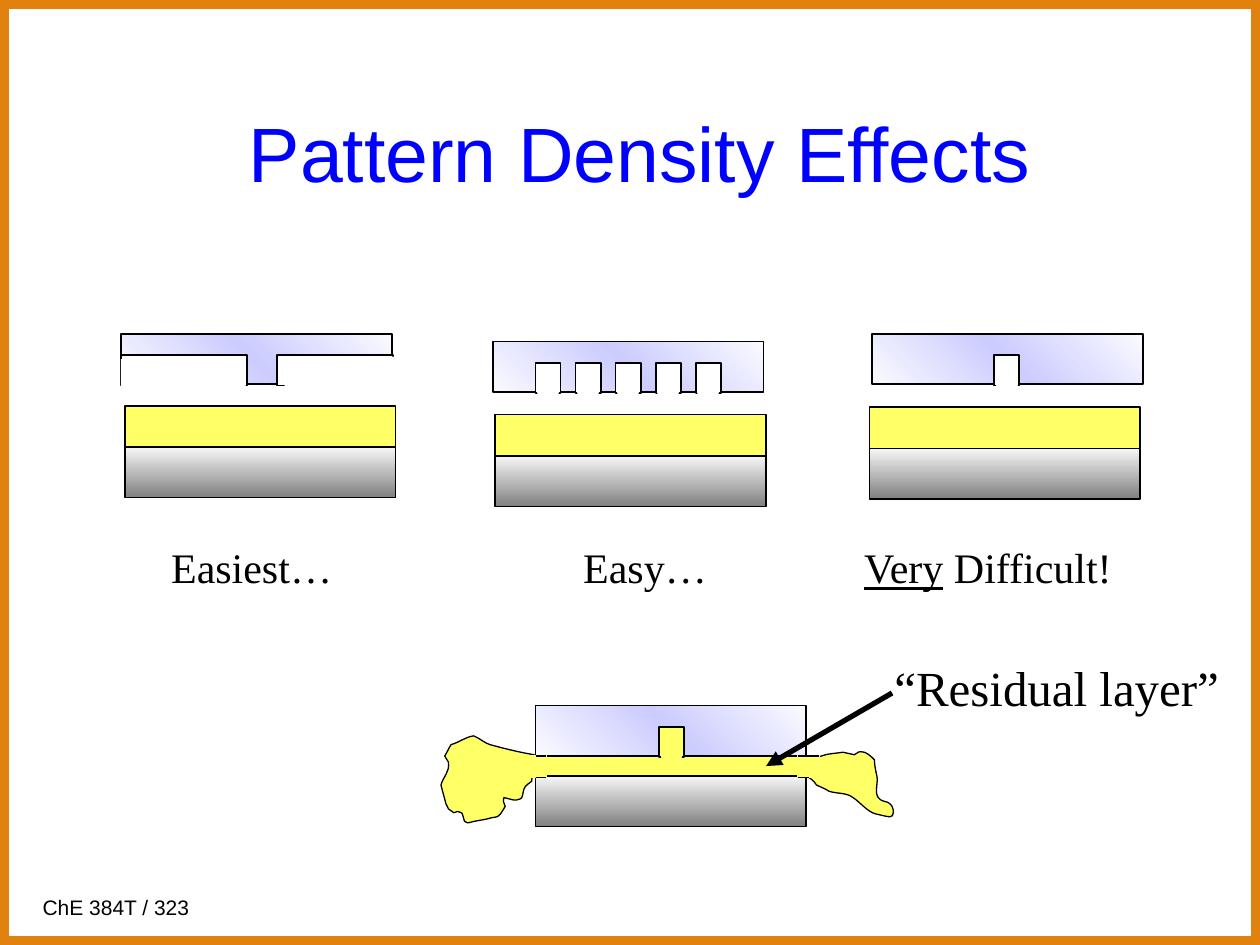
from lxml import etree
from pptx import Presentation
from pptx.dml.color import RGBColor
from pptx.enum import shapes, text
from pptx.oxml.ns import qn
from pptx.util import Inches, Pt

BLACK = RGBColor(0, 0, 0)
WHITE = RGBColor(255, 255, 255)
BLUE = RGBColor(0, 0, 255)
ORANGE = RGBColor(0xE2, 0x82, 0x0E)
YELLOW = RGBColor(0xFF, 0xFF, 0x66)
PALE = RGBColor(0xFA, 0xFA, 0xFF)
LAVENDER = RGBColor(0xCC, 0xCC, 0xFF)
LIGHT_GREY = RGBColor(0xF6, 0xF6, 0xF6)
GREY = RGBColor(0x80, 0x80, 0x80)

# Gradients: counter-clockwise angle, then evenly spaced colours
SILICON = (270, (LIGHT_GREY, GREY))
MOLD = (45, (PALE, LAVENDER, PALE))

LAYER_WIDTH, MOLD_HEIGHT, RESIST_HEIGHT = 2.15, 0.4, 0.33
CAVITY_WIDTH, CAVITY_HEIGHT, CAVITY_DROP = 0.2, 0.24, 0.17

# resist corner, mold corner, cavity left edges, cavity colour
DIFFICULT = ((6.9, 3.23), (6.92, 2.65), [7.89], WHITE)
EASY = ((3.93, 3.29), (3.91, 2.71), [4.25 + 0.318 * i for i in range(5)], WHITE)
EASIEST = ((0.99, 3.22), (0.96, 2.65), [], WHITE)
PRESSED = ((4.25, 5.83), (4.25, 5.6), [5.23], YELLOW)

# Wide openings either side of the single post: left, top, width, height, line
OPENINGS = [
    (0.96, 2.82, 1, 0.24, BLACK), (2.2, 2.82, 0.92, 0.24, BLACK),
    (2.26, 2.96, 0.8, 0.09, WHITE),
    (0.96, 2.85, 0.99, 0.23, None), (2.26, 2.83, 0.99, 0.24, None),
]

# Squeezed-out resist: start point, then Bezier segments (two controls and an end)
LEFT_START = (4.24, 5.99)
LEFT_CURVES = [
    (4.12, 5.97, 4, 5.94, 3.89, 5.91), (3.85, 5.9, 3.81, 5.86, 3.76, 5.84),
    (3.69, 5.85, 3.65, 5.89, 3.58, 5.91), (3.56, 5.94, 3.55, 5.97, 3.53, 6),
    (3.54, 6.02, 3.55, 6.03, 3.56, 6.05), (3.57, 6.13, 3.52, 6.16, 3.5, 6.23),
    (3.51, 6.27, 3.53, 6.34, 3.54, 6.38), (3.55, 6.39, 3.55, 6.41, 3.56, 6.42),
    (3.57, 6.43, 3.59, 6.44, 3.59, 6.44), (3.59, 6.44, 3.59, 6.45, 3.6, 6.45),
    (3.61, 6.45, 3.63, 6.44, 3.63, 6.44), (3.64, 6.44, 3.67, 6.45, 3.67, 6.46),
    (3.68, 6.48, 3.68, 6.51, 3.69, 6.52), (3.7, 6.53, 3.72, 6.53, 3.72, 6.53),
    (3.78, 6.51, 3.84, 6.51, 3.9, 6.49), (3.92, 6.49, 3.95, 6.48, 3.95, 6.48),
    (3.98, 6.46, 3.99, 6.43, 4.01, 6.4), (4, 6.37, 3.99, 6.36, 4, 6.33),
    (4.03, 6.34, 4.05, 6.34, 4.08, 6.35), (4.09, 6.35, 4.11, 6.35, 4.13, 6.34),
    (4.15, 6.34, 4.15, 6.28, 4.16, 6.26), (4.17, 6.23, 4.2, 6.22, 4.22, 6.2),
    (4.22, 6.18, 4.22, 6.16, 4.24, 6.15), (4.27, 6.11, 4.24, 6.04, 4.24, 5.99),
]
RIGHT_START = (6.4, 6.02)
RIGHT_CURVES = [
    (6.44, 6.03, 6.48, 6.01, 6.52, 6), (6.57, 5.98, 6.63, 5.98, 6.69, 5.97),
    (6.72, 5.98, 6.75, 5.98, 6.78, 5.99), (6.82, 5.97, 6.8, 5.96, 6.86, 5.97),
    (6.89, 5.98, 6.92, 6.01, 6.94, 6.03), (6.94, 6.07, 6.95, 6.12, 6.96, 6.16),
    (6.97, 6.21, 6.94, 6.29, 6.97, 6.33), (6.99, 6.36, 7.03, 6.36, 7.05, 6.37),
    (7.08, 6.39, 7.08, 6.4, 7.09, 6.43), (7.09, 6.44, 7.09, 6.48, 7.07, 6.48),
    (7.06, 6.49, 6.96, 6.46, 6.95, 6.46), (6.88, 6.44, 6.83, 6.37, 6.77, 6.33),
    (6.72, 6.29, 6.64, 6.3, 6.58, 6.28), (6.55, 6.26, 6.52, 6.25, 6.48, 6.23),
    (6.46, 6.2, 6.44, 6.18, 6.4, 6.16), (6.41, 6.14, 6.41, 6.15, 6.4, 6.14),
]
RIGHT_CORNERS = [(6.5, 6.08), (6.42, 6.08), RIGHT_START]

CAPTIONS = ["Easiest…\tEasy…\t", "Very", " Difficult!"]
CAPTION_TABS = [3.27, 5.5]

presentation = Presentation()
presentation.slide_width, presentation.slide_height = Inches(10), Inches(7.5)
slide = presentation.slides.add_slide(presentation.slide_layouts[6])


def style(shape, fill, line, width):
    shape.shadow.inherit = False
    if fill is None:
        shape.fill.background()
    elif isinstance(fill, RGBColor):
        shape.fill.solid()
        shape.fill.fore_color.rgb = fill
    else:
        angle, colors = fill
        shape.fill.gradient()
        shape.fill.gradient_angle = angle
        stops = shape._element.spPr.find(".//" + qn("a:gsLst"))
        stops.clear()
        for index, color in enumerate(colors):
            position = 100000 * index // (len(colors) - 1)
            stop = etree.SubElement(stops, qn("a:gs"), pos=str(position))
            etree.SubElement(stop, qn("a:srgbClr"), val=str(color))
    if line is None:
        shape.line.fill.background()
    else:
        shape.line.color.rgb = line
        shape.line.width = Pt(width)


def add_box(left, top, width, height, fill, line=BLACK, line_width=1):
    shape = slide.shapes.add_shape(
        shapes.MSO_SHAPE.RECTANGLE, *map(Inches, (left, top, width, height)))
    style(shape, fill, line, line_width)


def add_line(start, end, width=0.75):
    line = slide.shapes.add_connector(
        shapes.MSO_CONNECTOR.STRAIGHT, *map(Inches, start + end))
    line.line.color.rgb = BLACK
    line.line.width = Pt(width)
    etree.SubElement(line._element.spPr, qn("a:effectLst"))
    return line


def add_text(at, runs, size, font, color=BLACK, tabs=()):
    box = slide.shapes.add_textbox(*map(Inches, at))
    box.text_frame.word_wrap = True
    paragraph = box.text_frame.paragraphs[0]
    if tabs:
        tab_list = etree.SubElement(paragraph._p.get_or_add_pPr(), qn("a:tabLst"))
        for tab in tabs:
            etree.SubElement(tab_list, qn("a:tab"), pos=str(Inches(tab)), algn="l")
    for words in runs:
        run = paragraph.add_run()
        run.text = words
        run.font.size, run.font.name = Pt(size), font
        run.font.color.rgb = color
    return box.text_frame


def add_stack(resist, mold, cavities, cavity_color):
    """Draw silicon, resist and mold, then cut the cavities open at the bottom."""
    left, top = resist
    add_box(left, top + RESIST_HEIGHT, LAYER_WIDTH, MOLD_HEIGHT, SILICON)
    add_box(left, top, LAYER_WIDTH, RESIST_HEIGHT, YELLOW)
    add_box(*mold, LAYER_WIDTH, MOLD_HEIGHT, MOLD)
    cavity_top = mold[1] + CAVITY_DROP
    for cavity in cavities:
        add_box(cavity, cavity_top, CAVITY_WIDTH, CAVITY_HEIGHT, cavity_color)
        add_box(cavity + 0.02, cavity_top + 0.15, 0.16, 0.09, cavity_color, cavity_color)


def add_blob(start, curves, corners=()):
    """Outline the curve ends and corners, then bend the curve sides into Beziers."""
    ends = [curve[4:] for curve in curves] + list(corners)
    builder = slide.shapes.build_freeform(*map(Inches, start))
    builder.add_line_segments([tuple(map(Inches, end)) for end in ends], close=True)
    shape = builder.convert_to_shape()
    sides = shape._element.spPr.findall(".//" + qn("a:lnTo"))
    for side, curve in zip(sides, curves):
        bezier = etree.Element(qn("a:cubicBezTo"))
        for x, y in zip(curve[::2], curve[1::2]):
            etree.SubElement(bezier, qn("a:pt"), x=str(Inches(x) - shape.left),
                             y=str(Inches(y) - shape.top))
        side.getparent().replace(side, bezier)
    style(shape, YELLOW, BLACK, 0.75)


add_box(0, 0, 10, 7.5, None, ORANGE, 10)
add_text((0.24, 7.05, 2.86, 0.3), ["ChE 384T / 323"], 12, "Arial")
title = add_text((0.83, 0.58, 8.5, 1.25), ["Pattern Density Effects"], 44, "Arial", BLUE)
title.vertical_anchor = text.MSO_ANCHOR.MIDDLE
title.paragraphs[0].alignment = text.PP_ALIGN.CENTER

for stack in (DIFFICULT, EASY, EASIEST):
    add_stack(*stack)
for *at, outline in OPENINGS:
    add_box(*at, WHITE, outline)
captions = add_text((1.26, 4.25, 8.09, 0.5), CAPTIONS, 24, "Times New Roman",
                    tabs=CAPTION_TABS)
captions.paragraphs[0].runs[1].font.underline = True

add_stack(*PRESSED)
add_blob(LEFT_START, LEFT_CURVES)
add_box(4.17, 6, 0.17, 0.17, YELLOW, YELLOW, 0.75)
add_line((4.25, 6), (4.33, 6))
add_line((4.25, 6.17), (4.33, 6.17))
add_blob(RIGHT_START, RIGHT_CURVES, RIGHT_CORNERS)
add_box(6.33, 6, 0.17, 0.17, YELLOW, YELLOW, 0.75)
add_line((6.33, 6), (6.5, 6))
add_line((6.33, 6.17), (6.42, 6.17))

arrow = add_line((6.08, 6.08), (7.08, 5.5), 3)
etree.SubElement(arrow.line._get_or_add_ln(), qn("a:headEnd"), type="triangle")
add_text((7, 5.17, 3, 0.57), ["“Residual layer”"], 28, "Times New Roman")

presentation.save("out.pptx")
